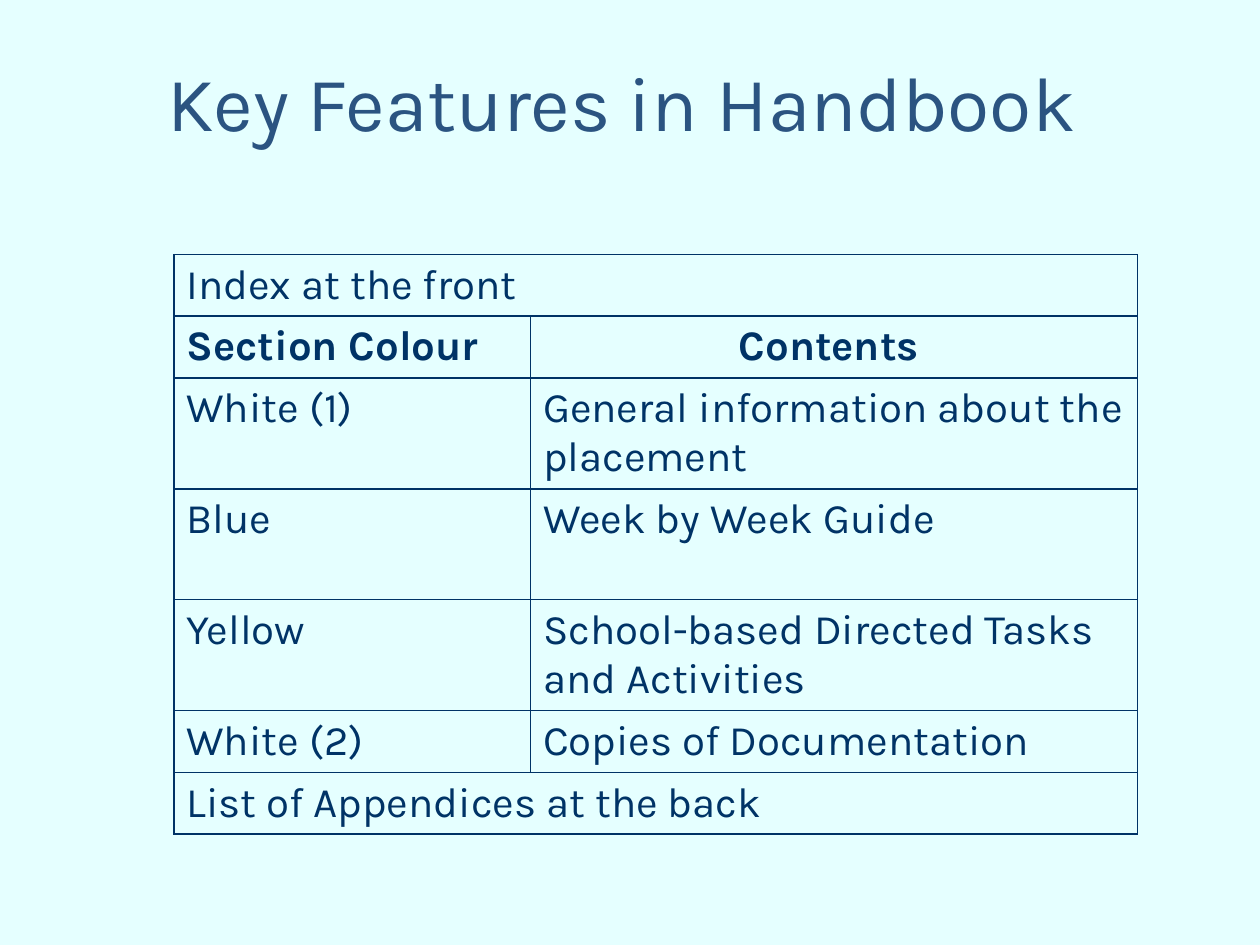
from lxml import etree
from pptx import Presentation
from pptx.dml.color import RGBColor
from pptx.enum import text
from pptx.oxml.ns import qn
from pptx.util import Inches, Pt

COLOURS = {"background": "E5FFFF", "title": "2B5481", "ink": "003366"}
FONT = "Karla"
LEFT, CENTER = text.PP_ALIGN.LEFT, text.PP_ALIGN.CENTER

TITLE = "Key Features in Handbook "
# A row with one entry spans both columns.
SECTIONS = [
    ("Index at the front",),
    ("Section Colour", "Contents "),
    ("White (1)", "General information about the placement"),
    ("Blue", "Week by Week Guide"),
    ("Yellow", "School-based Directed Tasks and Activities"),
    ("White (2)", "Copies of Documentation"),
    ("List of Appendices at the back",),
]
HEADING_ROW = 1
TALL_ROWS = (2, 3, 4)
COLUMN_WIDTHS = (2.83, 4.82)
ROW_HEIGHT, TALL_HEIGHT = 0.49, 0.88


def write(frame, words, size=24, colour="ink", bold=False, align=LEFT):
    paragraph = frame.paragraphs[0]
    paragraph.alignment = align
    run = paragraph.add_run()
    run.text = words
    run.font.name = FONT
    run.font.size = Pt(size)
    run.font.bold = bold
    run.font.color.rgb = RGBColor.from_string(COLOURS[colour])


def outline(cell, colour="ink", width=1):
    """Draw all four borders; they must come before the fill in the XML."""
    properties = cell._tc.get_or_add_tcPr()
    for position, side in enumerate(("a:lnL", "a:lnR", "a:lnT", "a:lnB")):
        line = etree.Element(qn(side), w=str(Pt(width)))
        fill = etree.SubElement(line, qn("a:solidFill"))
        etree.SubElement(fill, qn("a:srgbClr"), val=COLOURS[colour])
        properties.insert(position, line)


def add_title(slide):
    title = slide.shapes.title
    title.left, title.top = Inches(0.51), Inches(0.21)
    title.width, title.height = Inches(9), Inches(1.18)
    title.text_frame.word_wrap = True
    title.text_frame.vertical_anchor = text.MSO_ANCHOR.MIDDLE
    write(title.text_frame, TITLE, size=44, colour="title", align=CENTER)


def add_sections(slide):
    heights = [TALL_HEIGHT if row in TALL_ROWS else ROW_HEIGHT
               for row in range(len(SECTIONS))]
    table = slide.shapes.add_table(
        len(SECTIONS), len(COLUMN_WIDTHS), Inches(1.38), Inches(2.02),
        Inches(sum(COLUMN_WIDTHS)), Inches(sum(heights))).table
    table.first_row = table.horz_banding = False
    for column, width in zip(table.columns, COLUMN_WIDTHS):
        column.width = Inches(width)

    for row, entries in enumerate(SECTIONS):
        table.rows[row].height = Inches(heights[row])
        if len(entries) == 1:
            table.cell(row, 0).merge(table.cell(row, len(COLUMN_WIDTHS) - 1))
        for cell in table.rows[row].cells:
            cell.fill.background()
            outline(cell)
        heading = row == HEADING_ROW
        for column, words in enumerate(entries):
            write(table.cell(row, column).text_frame, words, bold=heading,
                  align=CENTER if heading and column else LEFT)


def main():
    deck = Presentation()
    deck.slide_width, deck.slide_height = Inches(10), Inches(7.5)
    slide = deck.slides.add_slide(deck.slide_layouts.get_by_name("Title Only"))
    slide.background.fill.solid()
    slide.background.fill.fore_color.rgb = RGBColor.from_string(
        COLOURS["background"])
    add_title(slide)
    add_sections(slide)
    deck.save("out.pptx")


if __name__ == "__main__":
    main()
